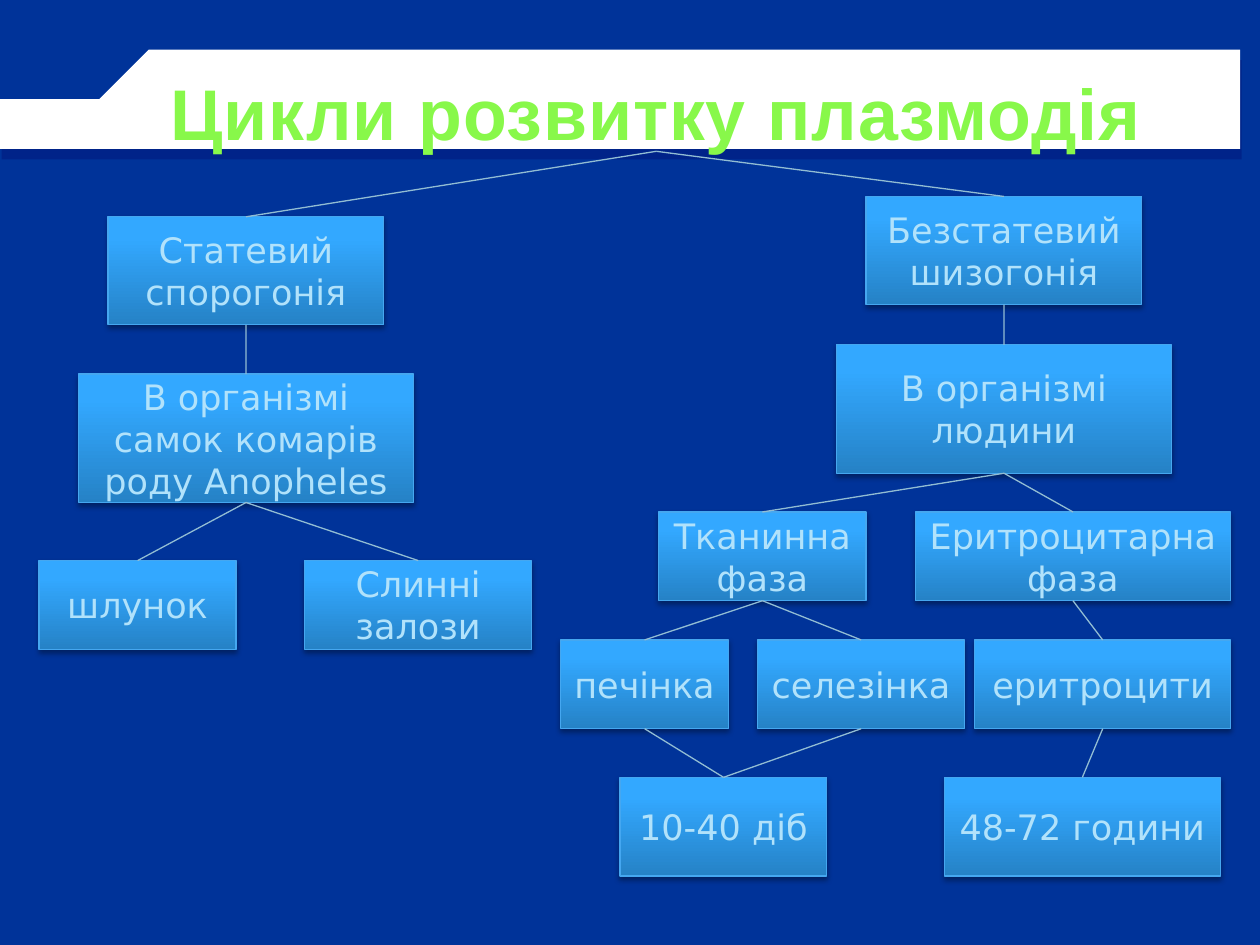
from lxml import etree
from pptx import Presentation
from pptx.dml.color import RGBColor
from pptx.enum.shapes import MSO_CONNECTOR, MSO_SHAPE
from pptx.enum.text import MSO_ANCHOR, PP_ALIGN
from pptx.oxml.ns import qn
from pptx.util import Cm, Pt

RECTANGLE = MSO_SHAPE.RECTANGLE
STRAIGHT = MSO_CONNECTOR.STRAIGHT
MIDDLE = MSO_ANCHOR.MIDDLE
CENTER = PP_ALIGN.CENTER
TOP, BOTTOM = 0, 2

BOX_STOPS = [(0, "2582C6"), (80, "33A8FF"), (100, "35A8FF")]
TITLE_STOPS = [(25, "88F84A"), (100, "5FB330")]

# White banner outline, in centimetres
BANNER = [(1.88, 2.36), (3.27, 0.81), (9.48, 0.81), (9.86, 1.32), (25.4, 1.32),
          (25.37, 2.95), (22.0, 3.0), (21.54, 3.35), (-0.05, 3.35), (0.02, 2.43)]

# Key: text, left, top, width, height in centimetres
BOXES = {
    "sexual": ("Статевий\nспорогонія", 2.18, 4.37, 5.56, 2.18),
    "asexual": ("Безстатевий\nшизогонія", 17.46, 3.96, 5.56, 2.18),
    "mosquito": ("В організмі самок комарів роду Anopheles", 1.58, 7.54, 6.76, 2.59),
    "human": ("В організмі людини", 16.86, 6.95, 6.76, 2.59),
    "stomach": ("шлунок", 0.79, 11.3, 3.97, 1.79),
    "glands": ("Слинні залози", 6.14, 11.3, 4.58, 1.79),
    "tissue": ("Тканинна фаза", 13.28, 10.32, 4.18, 1.79),
    "erythrocytic": ("Еритроцитарна фаза", 18.45, 10.32, 6.36, 1.79),
    "liver": ("печінка", 11.3, 12.9, 3.39, 1.79),
    "spleen": ("селезінка", 15.27, 12.9, 4.18, 1.79),
    "days": ("10-40 діб", 12.5, 15.67, 4.17, 1.99),
    "red cells": ("еритроцити", 19.65, 12.9, 5.16, 1.79),
    "hours": ("48-72 години", 19.04, 15.67, 5.56, 1.99),
}

LINKS = [
    ("title", "sexual"), ("title", "asexual"),
    ("sexual", "mosquito"), ("asexual", "human"),
    ("mosquito", "stomach"), ("mosquito", "glands"),
    ("human", "tissue"), ("human", "erythrocytic"),
    ("tissue", "liver"), ("tissue", "spleen"), ("erythrocytic", "red cells"),
    ("liver", "days"), ("spleen", "days"), ("red cells", "hours"),
]


def color(hex_code):
    return RGBColor.from_string(hex_code)


def set_gradient(fill, element, stops, angle):
    fill.gradient()
    fill.gradient_angle = angle
    stop_list = next(element.iter(qn("a:gsLst")))
    for old_stop in list(stop_list):
        stop_list.remove(old_stop)
    for position, hex_code in stops:
        stop = etree.SubElement(stop_list, qn("a:gs"), pos=str(position * 1000))
        etree.SubElement(stop, qn("a:srgbClr"), val=hex_code)


def set_shadow(shape, hex_code, opacity, blur, distance, angle):
    shape.shadow.inherit = False
    effects = shape._element.spPr.find(qn("a:effectLst"))
    shadow = etree.SubElement(
        effects, qn("a:outerShdw"), blurRad=str(Pt(blur)), dist=str(Pt(distance)),
        dir=str(angle * 60000), algn="ctr", rotWithShape="0")
    shade = etree.SubElement(shadow, qn("a:srgbClr"), val=hex_code)
    etree.SubElement(shade, qn("a:alpha"), val=str(opacity * 1000))


def write_text(shape, text, font_name, size):
    frame = shape.text_frame
    frame.word_wrap = True
    frame.vertical_anchor = MIDDLE
    frame.text = text
    spans = []
    for para in frame.paragraphs:
        para.alignment = CENTER
        for span in para.runs:
            span.font.name = font_name
            span.font.size = Pt(size)
            spans.append(span)
    return spans


def add_banner(page):
    builder = page.shapes.build_freeform(*BANNER[0], scale=Cm(1))
    builder.add_line_segments(BANNER[1:], close=True)
    banner = builder.convert_to_shape()
    banner.fill.solid()
    banner.fill.fore_color.rgb = color("FFFFFF")
    banner.line.fill.background()
    set_shadow(banner, "000066", 30, 0, 6.1, 81)


def add_title(page, text):
    title = page.shapes.add_textbox(Cm(2.97), Cm(1.47), Cm(20.52), Cm(1.58))
    for span in write_text(title, text, "Arial", 41):
        span.font.bold = True
        set_gradient(span.font.fill, span._r, TITLE_STOPS, 270)
        span._r.get_or_add_rPr().set("spc", "50")
    return title


def add_box(page, text, left, top, width, height):
    box = page.shapes.add_shape(RECTANGLE, Cm(left), Cm(top), Cm(width), Cm(height))
    set_gradient(box.fill, box._element.spPr, BOX_STOPS, 90)
    box.line.color.rgb = color("45A7F0")
    box.line.width = Pt(0.75)
    set_shadow(box, "000000", 35, 3.1, 1.8, 90)
    for span in write_text(box, text, "DejaVu Sans", 20):
        span.font.color.rgb = color("B1E2FB")
    return box


def add_link(page, parent, child):
    link = page.shapes.add_connector(STRAIGHT, 0, 0, 0, 0)
    link.begin_connect(parent, BOTTOM)
    link.end_connect(child, TOP)
    link.line.color.rgb = color("92BDD3")
    link.line.width = Pt(0.75)
    etree.SubElement(link._element.spPr, qn("a:effectLst"))


def main():
    deck = Presentation()
    deck.slide_width, deck.slide_height = Cm(25.4), Cm(19.05)
    page = deck.slides.add_slide(deck.slide_layouts[6])
    page.background.fill.solid()
    page.background.fill.fore_color.rgb = color("003399")

    # Heading
    add_banner(page)
    nodes = {"title": add_title(page, "Цикли розвитку плазмодія")}

    # Tree of life cycles
    for key, details in BOXES.items():
        nodes[key] = add_box(page, *details)
    for parent, child in LINKS:
        add_link(page, nodes[parent], nodes[child])

    deck.save("out.pptx")


if __name__ == "__main__":
    main()
